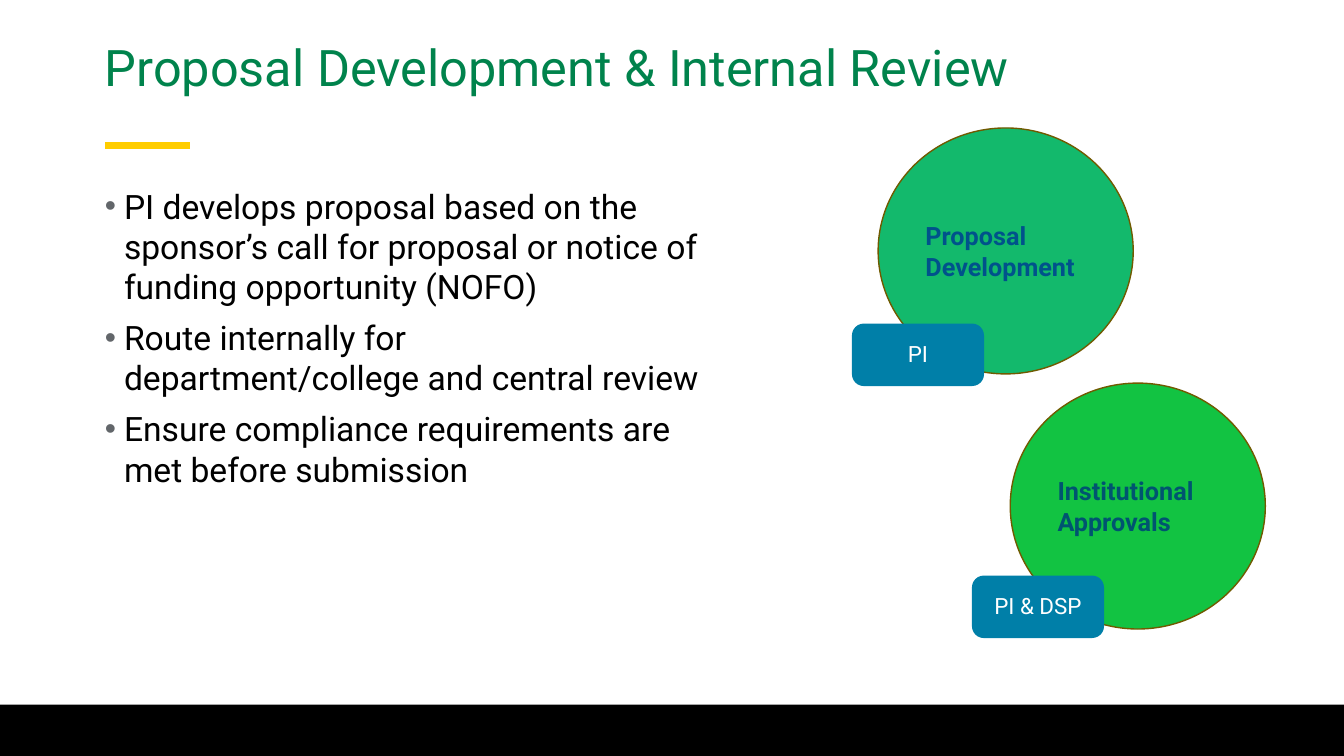
"""Build the slide on proposal development and internal review."""
from dataclasses import dataclass

from lxml import etree
from pptx import Presentation
from pptx.dml.color import RGBColor
from pptx.enum.shapes import MSO_CONNECTOR, MSO_SHAPE
from pptx.enum.text import MSO_ANCHOR, MSO_AUTO_SIZE, PP_ALIGN
from pptx.oxml.ns import qn
from pptx.util import Inches, Pt

OVAL, ROUNDED, RECTANGLE = MSO_SHAPE.OVAL, MSO_SHAPE.ROUNDED_RECTANGLE, MSO_SHAPE.RECTANGLE
STRAIGHT = MSO_CONNECTOR.STRAIGHT
LEFT, CENTER = PP_ALIGN.LEFT, PP_ALIGN.CENTER
TOP, MIDDLE = MSO_ANCHOR.TOP, MSO_ANCHOR.MIDDLE
NO_FIT = MSO_AUTO_SIZE.NONE

WIDTH, HEIGHT = Inches(13.33), Inches(7.5)
MARGIN = 7.8
COLORS = {
    "title": "00834C", "accent": "FFCD00", "footer": "000000",
    "body": "000000", "bullet": "62666A", "outline": "705A00",
    "badge": "007FA8", "badge_text": "FFFFFF",
}
POINTS = [
    "PI develops proposal based on the sponsor’s call for proposal or notice of funding opportunity (NOFO)",
    "Route internally for department/college and central review",
    "Ensure compliance requirements are met before submission",
]


@dataclass
class Area:
    """Hold a rectangle in percent of the slide's width and height."""
    left: float
    top: float
    width: float
    height: float

    def box(self) -> tuple[int, int, int, int]:
        """Return the rectangle as slide lengths."""
        return across(self.left), down(self.top), across(self.width), down(self.height)


@dataclass
class Stage:
    """Describe a stage circle and the badge of those responsible."""
    label: str
    fill: str
    ink: str
    circle: Area
    owner: str
    badge: Area


STAGES = [
    Stage("Proposal Development", "13B96C", "00528B", Area(65.34, 16.93, 18.98, 32.53),
          "PI", Area(63.39, 42.8, 9.83, 8.27)),
    Stage("Institutional Approvals", "12C342", "005470", Area(75.17, 50.67, 18.98, 32.53),
          "PI & DSP", Area(72.32, 76.13, 9.83, 8.27)),
]


def across(percent: float) -> int:
    """Turn a share of the slide's width into a length."""
    return round(WIDTH * percent / 100)


def down(percent: float) -> int:
    """Turn a share of the slide's height into a length."""
    return round(HEIGHT * percent / 100)


def apply(target, formats: dict) -> None:
    """Set each attribute of the target from a dict of values."""
    for attribute, value in formats.items():
        setattr(target, attribute, value)


def set_frame(frame, anchor, inset: float | None = None) -> None:
    """Set the anchor, wrapping and insets of a text frame."""
    apply(frame, {"word_wrap": True, "auto_size": NO_FIT, "vertical_anchor": anchor})
    if inset is not None:
        sides = ("left", "top", "right", "bottom")
        apply(frame, {f"margin_{side}": Inches(inset) for side in sides})


def write(paragraph, words: str, size: int, color: str, bold: bool = False, **formats) -> None:
    """Write one formatted run into a paragraph."""
    apply(paragraph, formats)
    run = paragraph.add_run()
    run.text = words
    apply(run.font, {"name": "Roboto", "size": Pt(size), "bold": bold})
    run.font.color.rgb = RGBColor.from_string(color)


def add_bullet(paragraph) -> None:
    """Give a paragraph a hanging grey bullet."""
    properties = paragraph._p.get_or_add_pPr()
    indent = Inches(0.19)
    properties.set("marL", str(indent))
    properties.set("indent", str(-indent))
    color = etree.SubElement(properties, qn("a:buClr"))
    etree.SubElement(color, qn("a:srgbClr"), val=COLORS["bullet"])
    etree.SubElement(properties, qn("a:buSzPct"), val="95000")
    etree.SubElement(properties, qn("a:buFont"), typeface="Arial")
    etree.SubElement(properties, qn("a:buChar"), char="•")


def add_block(slide, kind, area: Area, fill: str, outline: str | None = None):
    """Add a filled preset shape without shadow."""
    block = slide.shapes.add_shape(kind, *area.box())
    block.shadow.inherit = False
    block.fill.solid()
    block.fill.fore_color.rgb = RGBColor.from_string(fill)
    if outline:
        block.line.color.rgb = RGBColor.from_string(outline)
        block.line.width = Pt(1)
    else:
        block.line.fill.background()
    return block


def add_accent(slide) -> None:
    """Add the short accent line below the title."""
    accent = slide.shapes.add_connector(
        STRAIGHT, across(MARGIN), down(19.2), across(14.1), down(19.2))
    accent.line.color.rgb = RGBColor.from_string(COLORS["accent"])
    accent.line.width = Pt(5)
    etree.SubElement(accent._element.spPr, qn("a:effectLst"))


def place(placeholder, area: Area, anchor):
    """Move a placeholder and return its text frame."""
    apply(placeholder, dict(zip(("left", "top", "width", "height"), area.box())))
    set_frame(placeholder.text_frame, anchor, 0)
    return placeholder.text_frame


def add_points(frame) -> None:
    """Fill the body with its bulleted points."""
    for index, point in enumerate(POINTS):
        paragraph = frame.add_paragraph() if index else frame.paragraphs[0]
        add_bullet(paragraph)
        write(paragraph, point, 24, COLORS["body"], alignment=LEFT,
              space_before=Pt(7.5 if index else 0))


def add_circle(slide, stage: Stage) -> None:
    """Draw the circle of a stage."""
    circle = add_block(slide, OVAL, stage.circle, stage.fill, COLORS["outline"])
    set_frame(circle.text_frame, MIDDLE)
    write(circle.text_frame.paragraphs[0], stage.label, 18, stage.ink, True, alignment=LEFT)


def add_badge(slide, stage: Stage) -> None:
    """Draw the badge of those responsible for a stage."""
    badge = add_block(slide, ROUNDED, stage.badge, COLORS["badge"])
    badge.adjustments[0] = 0.19
    set_frame(badge.text_frame, MIDDLE, 0.16)
    write(badge.text_frame.paragraphs[0], stage.owner, 16, COLORS["badge_text"],
          alignment=CENTER, line_spacing=0.9)


def main() -> None:
    """Assemble and save the slide."""
    deck = Presentation()
    apply(deck, {"slide_width": WIDTH, "slide_height": HEIGHT})
    slide = deck.slides.add_slide(deck.slide_layouts[1])
    add_accent(slide)
    add_block(slide, RECTANGLE, Area(0, 93.2, 100, 6.8), COLORS["footer"])
    heading = place(slide.shapes.title, Area(MARGIN, 2.93, 84.4, 12.67), MIDDLE)
    write(heading.paragraphs[0], "Proposal Development & Internal Review", 36,
          COLORS["title"], alignment=LEFT, line_spacing=0.9)
    add_points(place(slide.placeholders[1], Area(MARGIN, 24.53, 44.56, 62.13), TOP))
    for draw in (add_circle, add_badge):
        for stage in STAGES:
            draw(slide, stage)
    deck.save("out.pptx")


if __name__ == "__main__":
    main()
